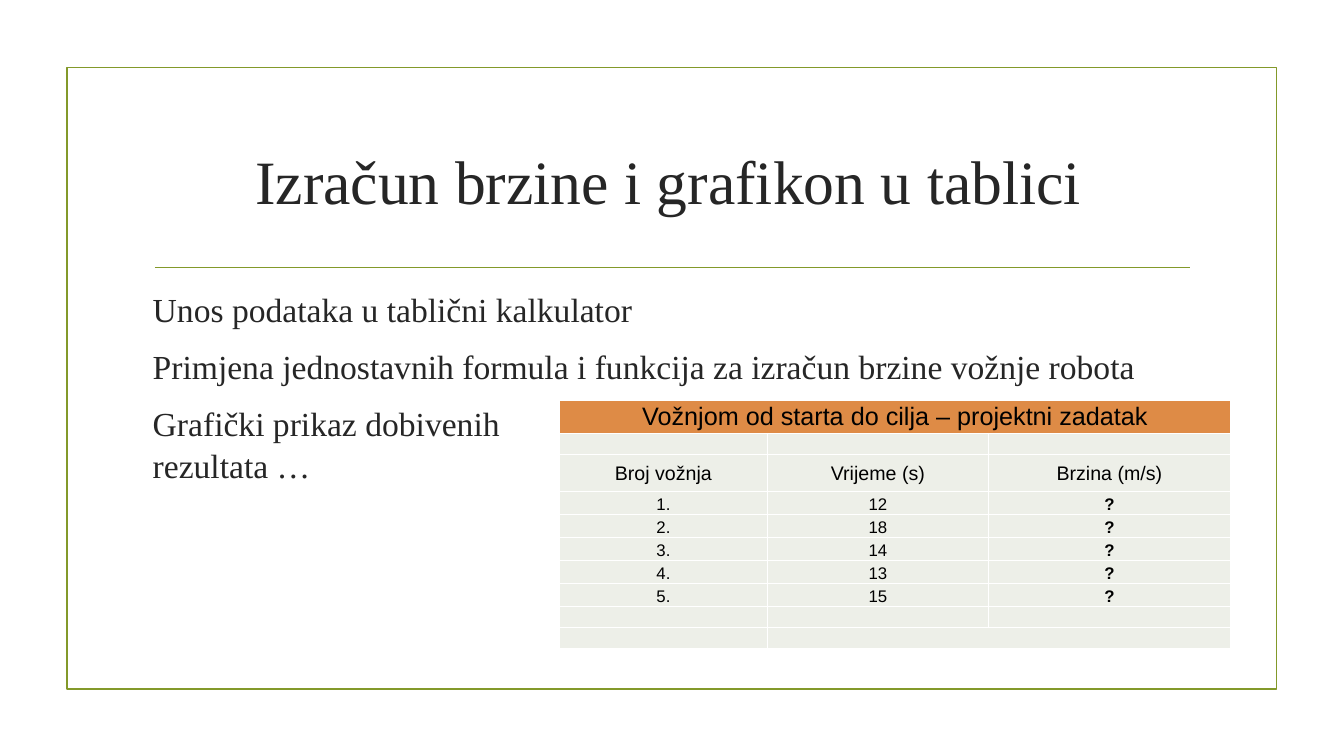
"""Build a slide on computing speed, with a table of test drives."""
from lxml import etree
from pptx import Presentation
from pptx.dml.color import RGBColor
from pptx.enum import shapes, text
from pptx.oxml.ns import qn
from pptx.util import Cm, Pt

OLIVE = RGBColor(0x83, 0x99, 0x2A)
INK = RGBColor(0x26, 0x26, 0x26)
BLACK = RGBColor(0, 0, 0)
ORANGE = RGBColor(0xD9, 0x78, 0x28)
PALE = RGBColor(0xED, 0xEF, 0xE8)
WHITE = RGBColor(0xFF, 0xFF, 0xFF)
SERIF, SANS = "Times New Roman", "Arial"


def write(paragraph, words, size, font=SANS, color=BLACK, bold=False,
          align=text.PP_ALIGN.CENTER):
    paragraph.text = words
    paragraph.alignment = align
    for run in paragraph.runs:
        run.font.size = Pt(size)
        run.font.name = font
        run.font.bold = bold
        run.font.color.rgb = color


def add_borders(cell):
    properties = cell._tc.get_or_add_tcPr()
    for side in ("a:lnL", "a:lnR", "a:lnT", "a:lnB"):
        border = etree.SubElement(properties, qn(side), w=str(Pt(1)))
        fill = etree.SubElement(border, qn("a:solidFill"))
        etree.SubElement(fill, qn("a:srgbClr"), val=str(WHITE))


prs = Presentation()
prs.slide_width, prs.slide_height = Cm(33.87), Cm(19.05)
slide = prs.slides.add_slide(prs.slide_layouts[5])

frame = slide.shapes.add_shape(shapes.MSO_SHAPE.RECTANGLE,
                               Cm(1.69), Cm(1.7), Cm(30.48), Cm(15.67))
frame.shadow.inherit = False
frame.fill.background()
rule = slide.shapes.add_connector(shapes.MSO_CONNECTOR.STRAIGHT,
                                  Cm(3.9), Cm(6.74), Cm(30), Cm(6.74))
etree.SubElement(rule._element.spPr, qn("a:effectLst"))
for outline in (frame.line, rule.line):
    outline.color.rgb = OLIVE
    outline.width = Pt(1.25)

heading = slide.shapes.title
heading.left, heading.top, heading.width, heading.height = (
    Cm(3.6), Cm(2.72), Cm(26.5), Cm(3.63))
heading.text_frame.vertical_anchor = text.MSO_ANCHOR.MIDDLE
write(heading.text_frame.paragraphs[0], "Izračun brzine i grafikon u tablici",
      size=44, font=SERIF, color=INK)

steps = slide.shapes.add_textbox(Cm(3.6), Cm(7.11), Cm(25.9), Cm(9.22)).text_frame
steps.word_wrap = True
for index, step in enumerate((
        "Unos podataka u tablični kalkulator",
        "Primjena jednostavnih formula i funkcija za izračun brzine vožnje robota",
        "Grafički prikaz dobivenih\vrezultata …")):
    paragraph = steps.add_paragraph() if index else steps.paragraphs[0]
    write(paragraph, step, size=24, font=SERIF, color=INK, align=text.PP_ALIGN.LEFT)
    paragraph.line_spacing = 1.04
    paragraph.space_before = Pt(4.8 if index else 0)
    paragraph.space_after = Pt(6)

BLANK = ("", "", "")
times = (12, 18, 14, 13, 15)
rows = [("Vožnjom od starta do cilja – projektni zadatak", "", ""), BLANK,
        ("Broj vožnja", "Vrijeme (s)", "Brzina (m/s)"),
        *((f"{number}.", str(time), "?") for number, time in enumerate(times, 1)),
        BLANK, BLANK]
heights = [0.84, 0.54, 0.92] + [0.58] * len(times) + [0.53, 0.53]
sizes = {0: 18, 2: 14}

drives = slide.shapes.add_table(len(rows), 3, Cm(14.1), Cm(10.08),
                                Cm(16.9), Cm(sum(heights))).table
for column, width in zip(drives.columns, (5.24, 5.57, 6.1)):
    column.width = Cm(width)
for r, (values, height) in enumerate(zip(rows, heights)):
    drives.rows[r].height = Cm(height)
    for c, value in enumerate(values):
        cell = drives.cell(r, c)
        cell.margin_left = cell.margin_right = cell.margin_top = Cm(0.02)
        cell.margin_bottom = 0
        cell.vertical_anchor = (text.MSO_ANCHOR.MIDDLE if r in sizes
                                else text.MSO_ANCHOR.BOTTOM)
        paragraph = cell.text_frame.paragraphs[0]
        if value:
            write(paragraph, value, size=sizes.get(r, 12), bold=value == "?")
        else:
            etree.SubElement(paragraph._p, qn("a:endParaRPr"), sz="1000")
        add_borders(cell)
        cell.fill.solid()
        cell.fill.fore_color.rgb = PALE if r else ORANGE
        if r == 0:
            tint = cell._tc.tcPr.find(qn("a:solidFill"))[0]
            etree.SubElement(tint, qn("a:alpha"), val="86000")
drives.cell(0, 0).merge(drives.cell(0, 2))
drives.cell(len(rows) - 1, 1).merge(drives.cell(len(rows) - 1, 2))

prs.save("out.pptx")
